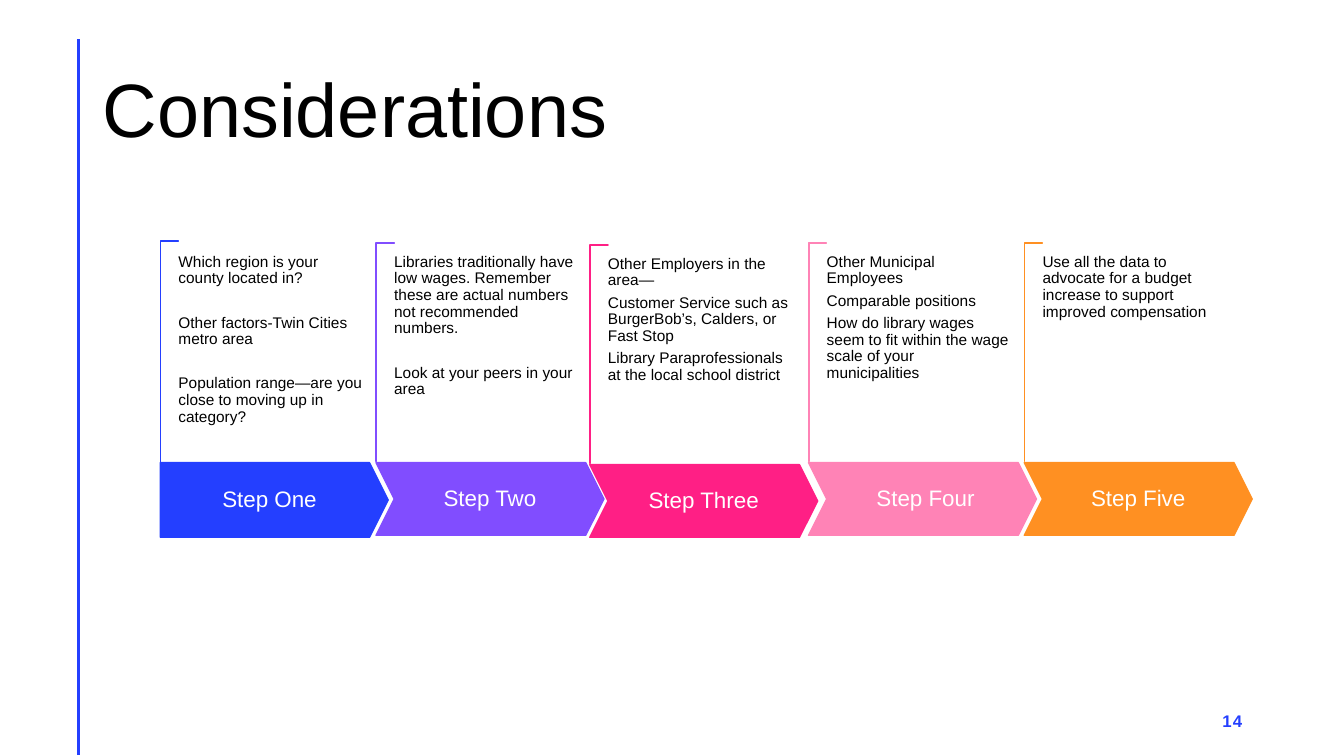
from dataclasses import dataclass

from pptx import Presentation
from pptx.dml.color import RGBColor
from pptx.enum.shapes import MSO_CONNECTOR, MSO_SHAPE
from pptx.enum.text import MSO_ANCHOR, PP_ALIGN
from pptx.oxml.xmlchemy import OxmlElement
from pptx.util import Inches, Pt

COLORS = {
    "blue": "243FFF",
    "purple": "814DFF",
    "magenta": "FF1F85",
    "pink": "FF83B6",
    "orange": "FF9022",
    "black": "000000",
    "white": "FFFFFF",
}
ARROW_WIDTH = 2.26
BRACKET_DEPTH = 0.18
NOTE_RISE = 2.07
NOTE_SIZE = (1.83, 1.57)
FRAME_FORMAT = {
    "word_wrap": True,
    "margin_left": 0,
    "margin_right": 0,
    "margin_top": 0,
    "margin_bottom": 0,
}


@dataclass(frozen=True)
class Step:
    label: str
    color: str
    left: float
    notes: tuple[str, ...]
    note_gap: float = 4
    top: float = 4.59
    height: float = 0.72
    bracket_rise: float = 2.18
    bracket_length: float = 2.17
    outline: MSO_SHAPE = MSO_SHAPE.CHEVRON


STEPS = (
    Step("Step One", "blue", 1.59,
         ("Which region is your county located in?",
          "Other factors-Twin Cities metro area",
          "Population range—are you close to moving up in category?"),
         note_gap=19.7, height=0.74, bracket_rise=2.2, bracket_length=2.23,
         outline=MSO_SHAPE.PENTAGON),
    Step("Step Two", "purple", 3.73,
         ("Libraries traditionally have low wages. Remember these are actual "
          "numbers not recommended numbers.",
          "Look at your peers in your area"),
         note_gap=19.7),
    Step("Step Three", "magenta", 5.85,
         ("Other Employers in the area—",
          "Customer Service such as BurgerBob’s, Calders, or Fast Stop",
          "Library Paraprofessionals at the local school district"),
         top=4.61),
    Step(" Step Four", "pink", 8.02,
         ("Other Municipal Employees",
          "Comparable positions",
          "How do library wages seem to fit within the wage scale of your "
          "municipalities")),
    Step("Step Five", "orange", 10.16,
         ("Use all the data to advocate for a budget increase to support "
          "improved compensation",)),
)


def rgb(color: str) -> RGBColor:
    return RGBColor.from_string(COLORS[color])


def apply_format(target, values: dict) -> None:
    for attribute, value in values.items():
        setattr(target, attribute, value)


def write(frame, texts: tuple[str, ...], size: float, color: str,
          frame_format: dict, paragraph_format: dict, bold: bool = False) -> None:
    """Fill a text frame with one formatted paragraph per text."""
    apply_format(frame, FRAME_FORMAT | frame_format)
    for index, text in enumerate(texts):
        paragraph = frame.paragraphs[0] if index == 0 else frame.add_paragraph()
        apply_format(paragraph, paragraph_format)
        run = paragraph.add_run()
        run.text = text
        apply_format(run.font, {"name": "Arial", "size": Pt(size), "bold": bold})
        run.font.color.rgb = rgb(color)


def add_filled(slide, outline: MSO_SHAPE, box: tuple[float, ...],
               fill: str, line: str, adjustments: tuple[float, ...]):
    shape = slide.shapes.add_shape(outline, *map(Inches, box))
    shape.shadow.inherit = False
    shape.fill.solid()
    shape.fill.fore_color.rgb = rgb(fill)
    shape.line.color.rgb = rgb(line)
    shape.line.width = Pt(1)
    for index, value in enumerate(adjustments):
        shape.adjustments[index] = value
    return shape


def add_text(slide, box: tuple[float, ...]):
    return slide.shapes.add_textbox(*map(Inches, box)).text_frame


def add_bracket(slide, step: Step) -> None:
    """Draw the corner turned a quarter, so its box is placed about its centre."""
    length = step.bracket_length
    shift = (length - BRACKET_DEPTH) / 2
    box = (step.left - shift, step.top - step.bracket_rise + shift,
           length, BRACKET_DEPTH)
    bracket = add_filled(slide, MSO_SHAPE.CORNER, box, "white", step.color,
                         (0.01, 0.01))
    bracket.rotation = 90


def add_step(slide, step: Step) -> None:
    add_bracket(slide, step)
    arrow = add_filled(slide, step.outline,
                       (step.left, step.top, ARROW_WIDTH, step.height),
                       step.color, step.color, (0.25,))
    write(arrow.text_frame, (step.label,), 16, "white",
          {"vertical_anchor": MSO_ANCHOR.MIDDLE},
          {"alignment": PP_ALIGN.CENTER, "line_spacing": 0.9})
    notes = add_text(slide, (step.left + BRACKET_DEPTH, step.top - NOTE_RISE,
                             *NOTE_SIZE))
    write(notes, step.notes, 11, "black", {},
          {"line_spacing": 0.9, "space_after": Pt(step.note_gap)})


def add_margin_line(slide) -> None:
    line = slide.shapes.add_connector(
        MSO_CONNECTOR.STRAIGHT, *map(Inches, (0.78, 0.39, 0.78, 7.49)))
    line.line.color.rgb = rgb("blue")
    line.line.width = Pt(2)
    line._element.spPr.append(OxmlElement("a:effectLst"))


def main() -> None:
    presentation = Presentation()
    presentation.slide_width = Inches(13.33)
    presentation.slide_height = Inches(7.5)
    slide = presentation.slides.add_slide(presentation.slide_layouts[6])

    add_margin_line(slide)
    side_margins = {"margin_left": Inches(0.1), "margin_right": Inches(0.1),
                    "vertical_anchor": MSO_ANCHOR.MIDDLE}
    title = add_text(slide, (0.92, 0.4, 11.5, 1.45))
    write(title, ("Considerations",), 54, "black", side_margins,
          {"line_spacing": 0.9})
    page_number = add_text(slide, (9.42, 6.95, 3, 0.4))
    write(page_number, ("14",), 12, "blue", side_margins,
          {"alignment": PP_ALIGN.RIGHT}, bold=True)
    page_number.paragraphs[0].runs[0].font._element.set("spc", "100")

    for step in STEPS:
        add_step(slide, step)
    presentation.save("out.pptx")


if __name__ == "__main__":
    main()
